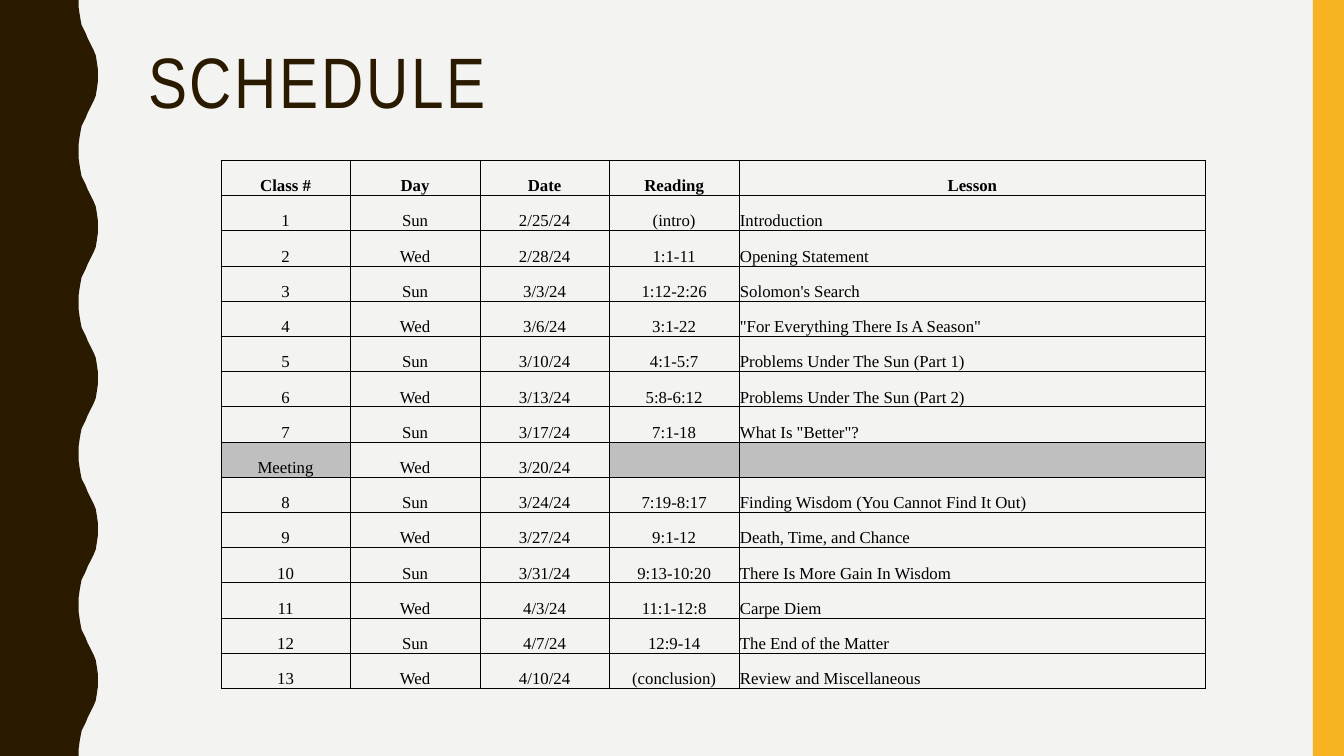
import pptx
import pptx.dml.color
import pptx.enum.shapes
import pptx.enum.text
import pptx.oxml
import pptx.oxml.ns
import pptx.util

Inches = pptx.util.Inches
COLOURS = {"paper": "F3F3F2", "brown": "2A1A00", "gold": "F8B323", "grey": "BFBFBF", "black": "000000"}


def paint(fill, name):
    fill.solid()
    fill.fore_color.rgb = pptx.dml.color.RGBColor.from_string(COLOURS[name])


def write(para, text, colour, formats):
    span = para.add_run()
    span.text = text
    for name, value in formats.items():
        setattr(span.font, name, value)
    span.font.color.rgb = pptx.dml.color.RGBColor.from_string(COLOURS[colour])
    return span


deck = pptx.Presentation()
deck.slide_width, deck.slide_height = Inches(13.33), Inches(7.5)
page = deck.slides.add_slide(deck.slide_layouts[6])
paint(page.background.fill, "paper")

half_wave = [
    (0.78, 0), (0.78, 0.07), (0.79, 0.14), (0.8, 0.2), (0.81, 0.25),
    (0.83, 0.29), (0.85, 0.33), (0.87, 0.38), (0.89, 0.42), (0.91, 0.46),
    (0.93, 0.5), (0.95, 0.55), (0.96, 0.61), (0.97, 0.68), (0.97, 0.75),
]
wave = half_wave + [(x, 1.5 - y) for x, y in half_wave[-2::-1]]
edge = [(x, y + 1.5 * period) for period in range(5) for x, y in wave]
outline = page.shapes.build_freeform(0, 0)
outline.add_line_segments([(Inches(x), Inches(y)) for x, y in edge + [(0, 7.5)]])
wavy_band = outline.convert_to_shape()
gold_band = page.shapes.add_shape(
    pptx.enum.shapes.MSO_SHAPE.RECTANGLE, Inches(13.02), 0, Inches(0.31), Inches(7.5))
for band, colour in ((wavy_band, "brown"), (gold_band, "gold")):
    paint(band.fill, colour)
    band.line.fill.background()
    band.shadow.inherit = False

box = page.shapes.add_textbox(Inches(1.37), Inches(0.42), Inches(11.13), Inches(1.63))
box.text_frame.word_wrap = True
para = box.text_frame.paragraphs[0]
para.line_spacing = 0.9
title = write(para, "SCHEDULE", "brown", {"name": "Arial Narrow", "size": pptx.util.Pt(51)})
title.font._element.set("spc", "200")

header = ("Class #", "Day", "Date", "Reading", "Lesson")
classes = [
    ("1", "2/25/24", "(intro)", "Introduction"),
    ("2", "2/28/24", "1:1-11", "Opening Statement"),
    ("3", "3/3/24", "1:12-2:26", "Solomon's Search"),
    ("4", "3/6/24", "3:1-22", '"For Everything There Is A Season"'),
    ("5", "3/10/24", "4:1-5:7", "Problems Under The Sun (Part 1)"),
    ("6", "3/13/24", "5:8-6:12", "Problems Under The Sun (Part 2)"),
    ("7", "3/17/24", "7:1-18", 'What Is "Better"?'),
    ("Meeting", "3/20/24", "", ""),
    ("8", "3/24/24", "7:19-8:17", "Finding Wisdom (You Cannot Find It Out)"),
    ("9", "3/27/24", "9:1-12", "Death, Time, and Chance"),
    ("10", "3/31/24", "9:13-10:20", "There Is More Gain In Wisdom"),
    ("11", "4/3/24", "11:1-12:8", "Carpe Diem"),
    ("12", "4/7/24", "12:9-14", "The End of the Matter"),
    ("13", "4/10/24", "(conclusion)", "Review and Miscellaneous"),
]
rows = [header] + [
    (number, ("Sun", "Wed")[index % 2], date, reading, lesson)
    for index, (number, date, reading, lesson) in enumerate(classes)
]

table = page.shapes.add_table(
    len(rows), len(header), Inches(2.19), Inches(1.59), Inches(9.77), Inches(5.24)).table
table.first_row = table.horz_banding = False
lesson_width = 4.63
for column in table.columns:
    column.width = Inches((9.77 - lesson_width) / 4)
table.columns[4].width = Inches(lesson_width)

cell_format = {
    "margin_left": Inches(0.01), "margin_right": Inches(0.01),
    "margin_top": Inches(0.01), "margin_bottom": 0,
    "vertical_anchor": pptx.enum.text.MSO_ANCHOR.BOTTOM,
}
for row_index, row in enumerate(rows):
    table.rows[row_index].height = Inches(5.24 / len(rows))
    for column_index, text in enumerate(row):
        cell = table.cell(row_index, column_index)
        for name, value in cell_format.items():
            setattr(cell, name, value)
        for side in ("lnL", "lnR", "lnT", "lnB"):
            cell._tc.tcPr.append(pptx.oxml.parse_xml(
                f'<a:{side} {pptx.oxml.ns.nsdecls("a")} w="6350"><a:solidFill>'
                f'<a:srgbClr val="{COLOURS["black"]}"/></a:solidFill></a:{side}>'))
        if row[0] == "Meeting" and text in ("Meeting", ""):
            paint(cell.fill, "grey")
        else:
            cell.fill.background()
        para = cell.text_frame.paragraphs[0]
        if row_index == 0 or column_index < 4:
            para.alignment = pptx.enum.text.PP_ALIGN.CENTER
        if text:
            write(para, text, "black", {
                "name": "Times New Roman", "size": pptx.util.Pt(12), "bold": row_index == 0})

deck.save("out.pptx")
